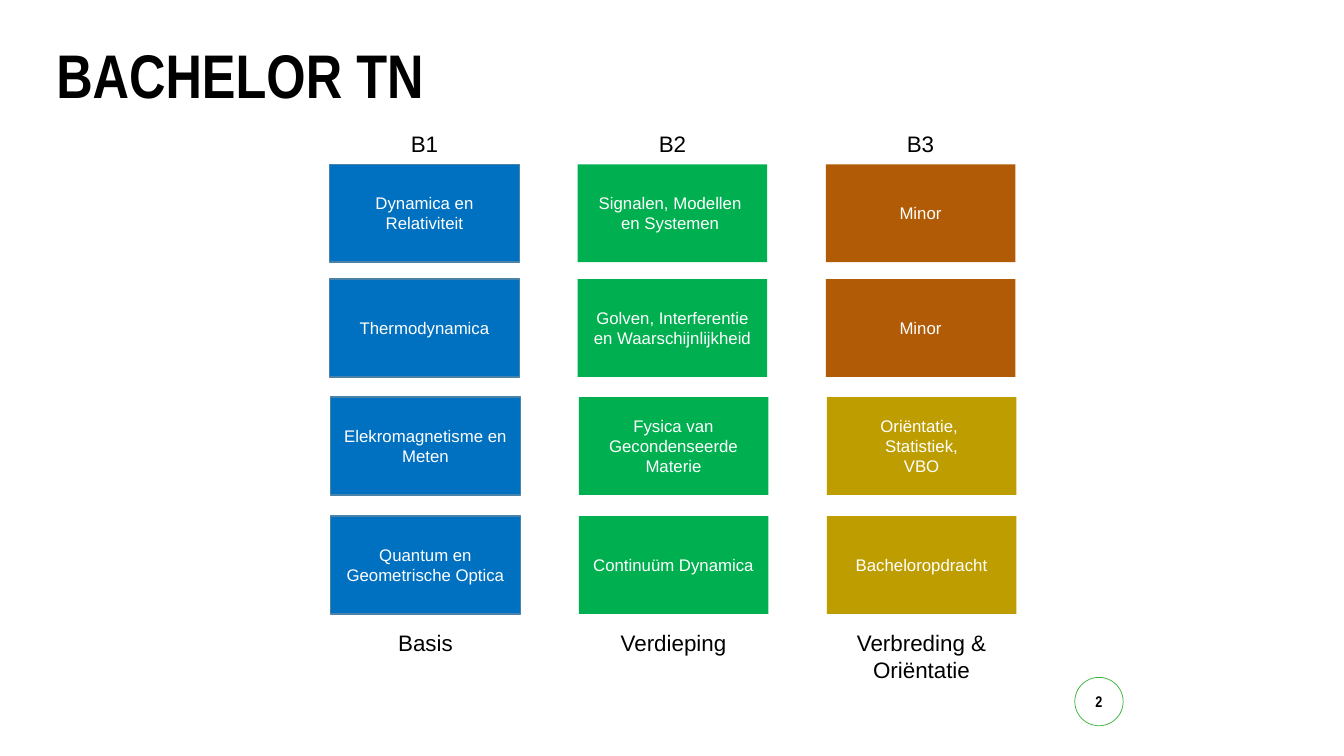
import dataclasses
import typing

import pptx
import pptx.dml.color
import pptx.enum.shapes
import pptx.enum.text
import pptx.util

INCH = pptx.util.Inches
SHAPE = pptx.enum.shapes.MSO_SHAPE
ANCHOR = pptx.enum.text.MSO_ANCHOR
ALIGN = pptx.enum.text.PP_ALIGN
FIT = pptx.enum.text.MSO_AUTO_SIZE

LEFT, PITCH = 3.27, 2.46
WIDE, HIGH = 1.88, 0.97
ROWS = [1.63, 2.77, 3.94, 5.12]
SHIFTS = [0, 0, 0.01, 0.01]
HEAD, FOOT = 1.24, 6.19
BLUE, GREEN, BROWN, GOLD = "0070C0", "00B050", "B15B06", "BE9D00"
BLACK, WHITE = "000000", "FFFFFF"


@dataclasses.dataclass
class Course:
    name: str
    fill: str
    edge: typing.Optional[str] = None


@dataclasses.dataclass
class Year:
    head: str
    foot: str
    deep: float
    courses: list[Course]


YEARS = [
    Year("B1", "Basis", 0.37, [
        Course(name, BLUE, "4983A9") for name in (
            "Dynamica en Relativiteit",
            "Thermodynamica",
            "Elekromagnetisme en Meten",
            "Quantum en Geometrische Optica",
        )
    ]),
    Year("B2", "Verdieping", 0.37, [
        Course(name, GREEN) for name in (
            "Signalen, Modellen \ven Systemen ",
            "Golven, Interferentie en Waarschijnlijkheid",
            "Fysica van Gecondenseerde Materie",
            "Continuüm Dynamica",
        )
    ]),
    Year("B3", "Verbreding & Oriëntatie", 0.64, [
        Course("Minor", BROWN),
        Course("Minor", BROWN),
        Course("Oriëntatie, \vStatistiek,\nVBO", GOLD),
        Course("Bacheloropdracht", GOLD),
    ]),
]


def color(code: str) -> pptx.dml.color.RGBColor:
    return pptx.dml.color.RGBColor.from_string(code)


def write(shape, text: str, size: float, ink: str, face: str = "Arial",
          bold: bool = False, align=ALIGN.CENTER) -> None:
    frame = shape.text_frame
    frame.word_wrap = True
    frame.text = text
    for para in frame.paragraphs:
        para.alignment = align
        para.font.size = pptx.util.Pt(size)
        para.font.name = face
        para.font.bold = bold
        para.font.color.rgb = color(ink)


def block(slide, kind, x: float, y: float, wide: float, high: float,
          fill: str, edge: typing.Optional[str], width: float):
    """Draw a filled shape, with an outline only if edge is given."""
    shape = slide.shapes.add_shape(kind, INCH(x), INCH(y), INCH(wide), INCH(high))
    shape.shadow.inherit = False
    shape.fill.solid()
    shape.fill.fore_color.rgb = color(fill)
    if edge:
        shape.line.color.rgb = color(edge)
        shape.line.width = pptx.util.Pt(width)
    else:
        shape.line.fill.background()
    shape.text_frame.vertical_anchor = ANCHOR.MIDDLE
    return shape


def label(slide, x: float, y: float, high: float, text: str) -> None:
    box = slide.shapes.add_textbox(INCH(x), INCH(y), INCH(WIDE), INCH(high))
    write(box, text, 16, BLACK)
    box.text_frame.auto_size = FIT.SHAPE_TO_FIT_TEXT


def column(slide, year: Year, x: float) -> None:
    label(slide, x, HEAD, 0.37, year.head)
    for course, y, shift in zip(year.courses, ROWS, SHIFTS):
        shape = block(slide, SHAPE.RECTANGLE, x + shift, y, WIDE, HIGH,
                      course.fill, course.edge, 1)
        write(shape, course.name, 12, WHITE)
    label(slide, x + SHIFTS[-1], FOOT, year.deep, year.foot)


def main() -> None:
    deck = pptx.Presentation()
    deck.slide_width, deck.slide_height = INCH(13.33), INCH(7.5)
    slide = deck.slides.add_slide(deck.slide_layouts[6])

    title = slide.shapes.add_textbox(INCH(0.46), INCH(0.4), INCH(12.42), INCH(1.45))
    write(title, "BACHELOR TN", 44, BLACK, "Arial Narrow", True, ALIGN.LEFT)
    title.text_frame.paragraphs[0].line_spacing = 0.9

    badge = block(slide, SHAPE.OVAL, 10.66, 6.72, 0.48, 0.48, WHITE, "34B234", 0.5)
    write(badge, "2", 11, BLACK, "Arial Narrow", True)

    for index, year in enumerate(YEARS):
        column(slide, year, LEFT + index * PITCH)

    deck.save("out.pptx")


if __name__ == "__main__":
    main()
